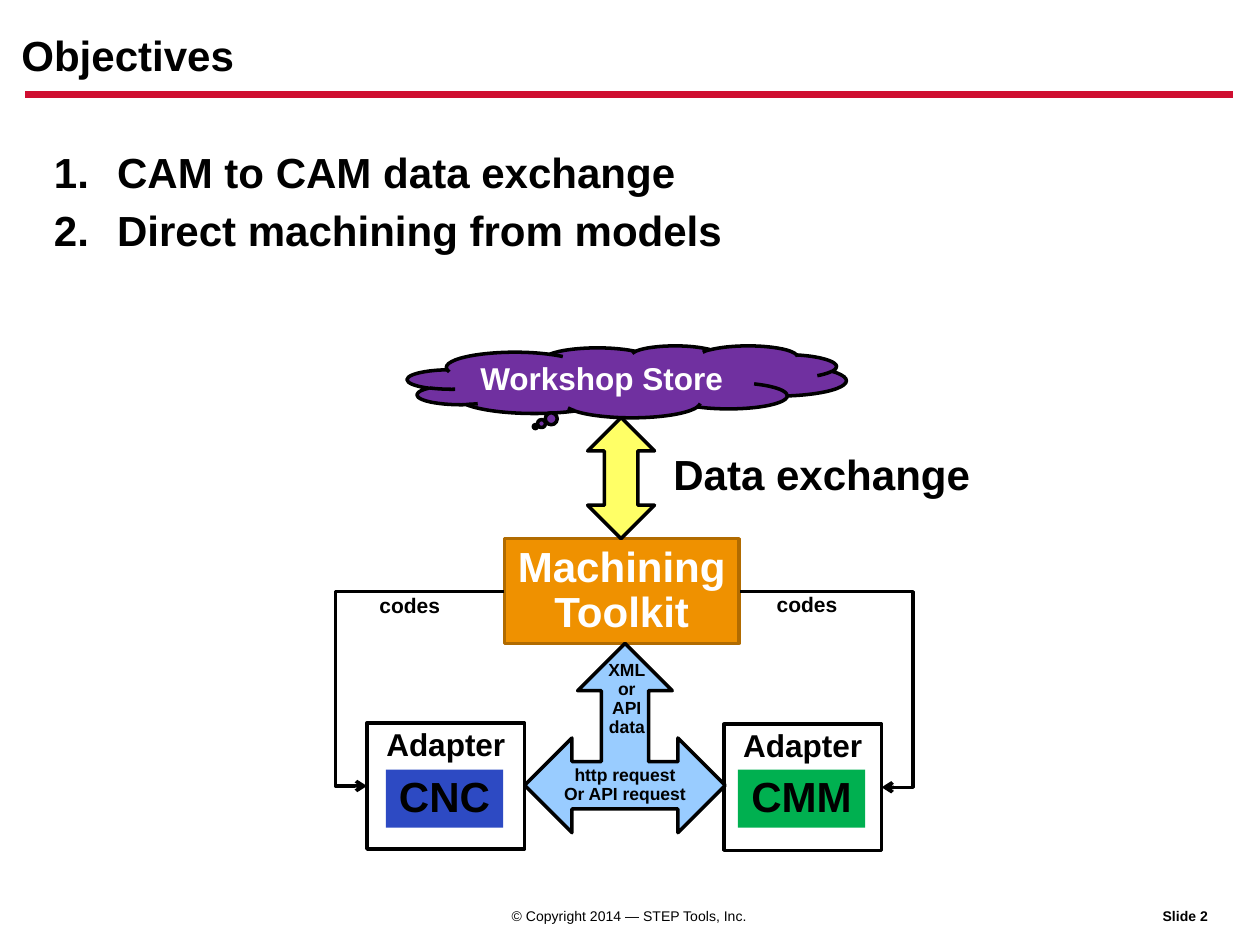
import pptx
import pptx.util
import pptx.dml.color
import pptx.enum.shapes
import pptx.enum.text
import pptx.oxml
import pptx.oxml.ns
from lxml import etree

Inches, Pt = pptx.util.Inches, pptx.util.Pt
RGB = pptx.dml.color.RGBColor
Kind = pptx.enum.shapes.MSO_SHAPE
Link = pptx.enum.shapes.MSO_CONNECTOR
Align = pptx.enum.text.PP_ALIGN
Anchor = pptx.enum.text.MSO_ANCHOR
qn = pptx.oxml.ns.qn

BLACK = RGB(0x00, 0x00, 0x00)
WHITE = RGB(0xFF, 0xFF, 0xFF)
RED = RGB(0xCF, 0x0E, 0x30)
ORANGE = RGB(0xEF, 0x91, 0x00)
BROWN = RGB(0xB1, 0x6B, 0x00)
PURPLE = RGB(0x70, 0x30, 0xA0)
GREEN = RGB(0x00, 0xB0, 0x50)
BLUE = RGB(0x2D, 0x4A, 0xC3)
SKY = RGB(0x99, 0xCC, 0xFF)
YELLOW = RGB(0xFF, 0xFF, 0x66)

SIZE = (9.99, 7.49)
RULE = ((0.2, 0.75), (9.78, 0.75))
GOALS = ["CAM to CAM data exchange", "Direct machining from models"]
GOAL_BOX = (0.33, 1.16, 9.33, 0.95)

# box, lines, format
TITLE = ((0.17, 0.28, 1.7, 0.36), ["Objectives"], {"size": 24})
FOOTER = [
    ((9.12, 7.16, 0.63, 0.22), ["Slide 2"], {"size": 8}),
    ((3.94, 7.16, 2.1, 0.22), ["© Copyright 2014 — STEP Tools, Inc."],
     {"size": 8, "bold": False, "align": Align.CENTER}),
]
LABELS = [
    ((2.91, 4.67, 0.69, 0.28), ["codes"], {"size": 12}),
    ((6.06, 4.66, 0.69, 0.28), ["codes"], {"size": 12}),
    ((4.72, 5.19, 0.5, 0.71), ["XML", "or", "API", "data"],
     {"size": 10, "align": Align.CENTER}),
    ((5.24, 3.55, 2.58, 0.46), ["Data exchange"], {"size": 24}),
]

# kind, box, fill, line, lines, format
MID = {"align": Align.CENTER, "anchor": Anchor.MIDDLE}
HEAD = {"align": Align.CENTER, "size": 18, "wrap": True}
PARTS = [
    (Kind.RECTANGLE, (4, 4.27, 1.86, 0.83), ORANGE, BROWN,
     ["Machining", "Toolkit"], {**MID, "size": 24, "color": WHITE}),
    (Kind.CLOUD_CALLOUT, (3.23, 2.74, 3.48, 0.57), PURPLE, BLACK,
     ["Workshop Store"],
     {"anchor": Anchor.MIDDLE, "size": 18, "color": WHITE, "wrap": True}),
    (Kind.RECTANGLE, (5.85, 6.1, 1.01, 0.46), GREEN, None,
     ["CMM"], {**MID, "size": 24}),
    (Kind.RECTANGLE, (5.74, 5.74, 1.25, 1), None, BLACK, ["Adapter"], HEAD),
    (Kind.LEFT_RIGHT_UP_ARROW, (4.16, 5.1, 1.59, 1.5), SKY, BLACK,
     ["http request", "Or API request"], {**MID, "size": 10, "wrap": True}),
    (Kind.RECTANGLE, (3.06, 6.1, 0.93, 0.46), BLUE, None,
     ["CNC"], {**MID, "size": 24}),
    (Kind.RECTANGLE, (2.91, 5.73, 1.25, 1), None, BLACK, ["Adapter"], HEAD),
    (Kind.UP_DOWN_ARROW, (4.66, 3.31, 0.53, 0.96), YELLOW, BLACK, [], {}),
]

# start, end, x of the outer bend
FLOWS = [
    ((5.87, 4.69), (6.99, 6.24), 7.24),
    ((4, 4.69), (2.91, 6.23), 2.66),
]


def write(shape, lines, size=12, bold=True, color=BLACK, align=Align.LEFT,
          anchor=Anchor.TOP, wrap=False, inset=(0.1, 0.05), number=False):
    frame = shape.text_frame
    across, down = map(Inches, inset)
    look = {"word_wrap": wrap, "vertical_anchor": anchor,
            "margin_left": across, "margin_right": across,
            "margin_top": down, "margin_bottom": down}
    for name, value in look.items():
        setattr(frame, name, value)
    face = {"name": "Arial", "size": Pt(size), "bold": bold}
    for index, line in enumerate(lines):
        para = frame.add_paragraph() if index else frame.paragraphs[0]
        para.alignment, para.line_spacing = align, 0.9
        if number:
            if index:
                para.space_before = Pt(7)
            props = para._p.get_or_add_pPr()
            props.set("marL", str(Inches(0.5)))
            props.set("indent", str(-Inches(0.5)))
            etree.SubElement(props, qn("a:buFont"), typeface="+mj-lt")
            etree.SubElement(props, qn("a:buAutoNum"), type="arabicPeriod")
        run = para.add_run()
        run.text = line
        for name, value in face.items():
            setattr(run.font, name, value)
        run.font.color.rgb = color


def label(slide, box, lines, style):
    write(slide.shapes.add_textbox(*map(Inches, box)), lines, **style)


def part(slide, kind, box, fill, edge, lines, style):
    shape = slide.shapes.add_shape(kind, *map(Inches, box))
    shape.shadow.inherit = False
    if fill is None:
        shape.fill.background()
    else:
        shape.fill.solid()
        shape.fill.fore_color.rgb = fill
    if edge is None:
        shape.line.fill.background()
    else:
        shape.line.color.rgb = edge
        shape.line.width = Pt(2)
    write(shape, lines, **style)


def connect(slide, kind, start, end, color, width):
    link = slide.shapes.add_connector(kind, *map(Inches, start + end))
    link.line.color.rgb = color
    link.line.width = Pt(width)
    etree.SubElement(link._element.spPr, qn("a:effectLst"))
    return link


def flow(slide, start, end, bend):
    """Draw an arrow that leaves sideways, turns at bend and comes back."""
    link = connect(slide, Link.ELBOW, start, end, BLACK, 2)
    ratio = (bend - start[0]) / (end[0] - start[0])
    guides = link._element.spPr.find(qn("a:prstGeom")).find(qn("a:avLst"))
    etree.SubElement(guides, qn("a:gd"), name="adj1",
                     fmla=f"val {round(ratio * 100000)}")
    etree.SubElement(link.line._get_or_add_ln(), qn("a:tailEnd"), type="arrow")


def main():
    deck = pptx.Presentation()
    deck.slide_width, deck.slide_height = map(Inches, SIZE)
    slide = deck.slides.add_slide(deck.slide_layouts[6])
    connect(slide, Link.STRAIGHT, *RULE, RED, 4)
    box, lines, style = TITLE
    label(slide, box, lines, {**style, "inset": (0, 0)})
    label(slide, GOAL_BOX, GOALS, {"size": 24, "wrap": True, "number": True})
    for item in PARTS:
        part(slide, *item)
    for item in FLOWS:
        flow(slide, *item)
    for item in LABELS + FOOTER:
        label(slide, *item)
    deck.save("out.pptx")


if __name__ == "__main__":
    main()
